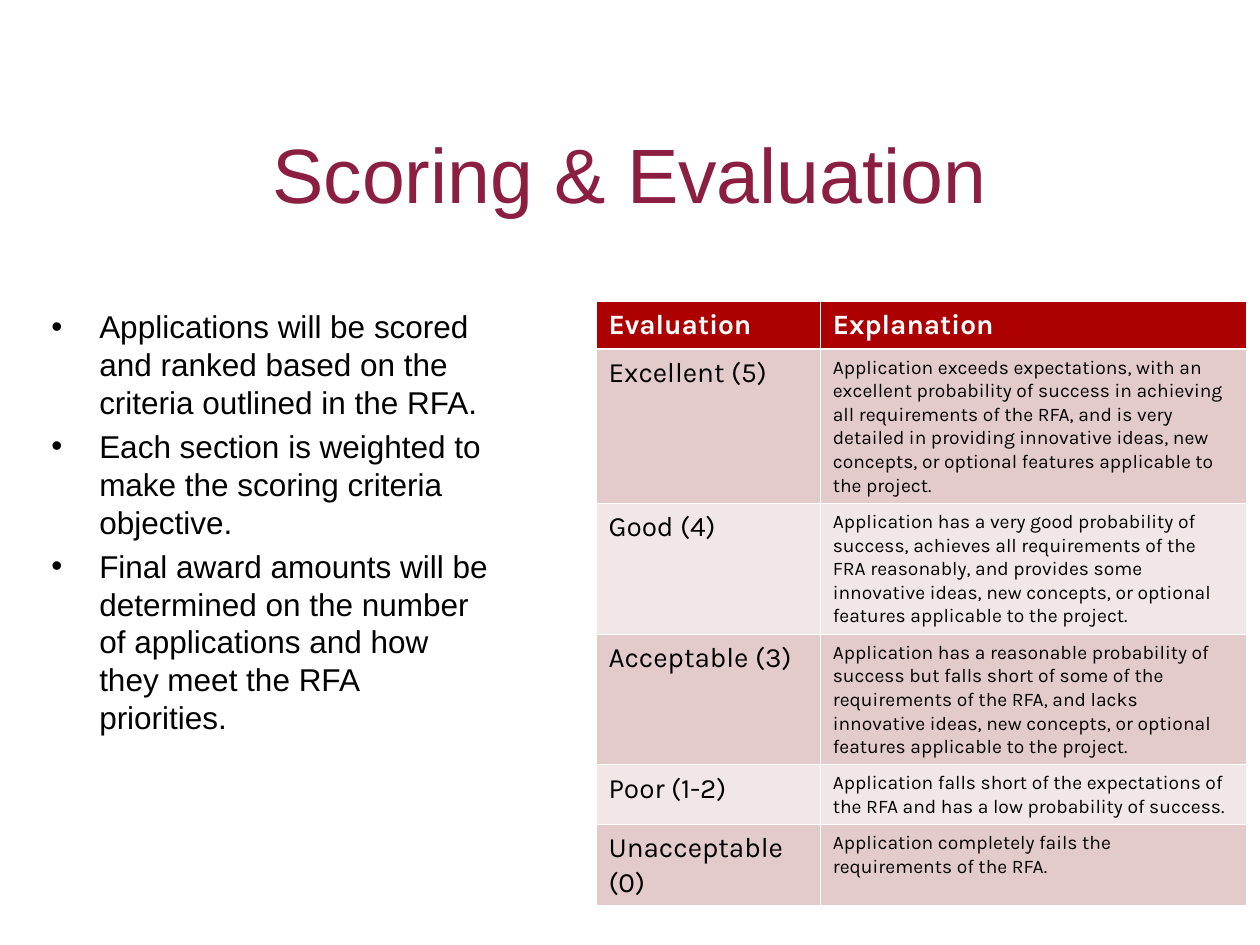
from lxml import etree
from pptx import Presentation, util as u
from pptx.dml.color import RGBColor
from pptx.enum import text
from pptx.oxml.ns import qn


def style(font, name, size, color, bold=False):
    font.name, font.size, font.bold = name, u.Pt(size), bold
    font.color.rgb = RGBColor.from_string(color)


def add_border(cell, side, points, color="FFFFFF"):
    line = etree.Element(qn("a:" + side), w=str(u.Pt(points)))
    fill = etree.SubElement(line, qn("a:solidFill"))
    etree.SubElement(fill, qn("a:srgbClr"), val=color)
    cell._tc.get_or_add_tcPr().append(line)


presentation = Presentation()
presentation.slide_width, presentation.slide_height = u.Inches(10), u.Inches(7.5)
slide = presentation.slides.add_slide(presentation.slide_layouts[5])
content_top = u.Inches(2.39)

# Title
title = slide.shapes.title
title.left, title.top = u.Inches(0.5), u.Inches(0.8)
title.width, title.height = u.Inches(9), u.Inches(1.14)
title.text_frame.text = "Scoring & Evaluation"
title.text_frame.vertical_anchor = text.MSO_ANCHOR.MIDDLE
paragraph = title.text_frame.paragraphs[0]
paragraph.alignment = text.PP_ALIGN.CENTER
style(paragraph.font, "Arial", 44, "8B1E41")

# Evaluation table
rows = [
    ("Evaluation", "Explanation", 0.38),
    ("Excellent (5)",
     "Application exceeds expectations, with an excellent probability of success in "
     "achieving all requirements of the RFA, and is very detailed in providing "
     "innovative ideas, new concepts, or optional features applicable to the project.",
     1.03),
    ("Good (4)",
     "Application has a very good probability of success, achieves all requirements of "
     "the FRA reasonably, and provides some innovative ideas, new concepts, or optional "
     "features applicable to the project.", 1.03),
    ("Acceptable (3)",
     "Application has a reasonable probability of success but falls short of some of the "
     "requirements of the RFA, and lacks innovative ideas, new concepts, or optional "
     "features applicable to the project.", 1.03),
    ("Poor (1-2)",
     "Application falls short of the expectations of the RFA and has a low probability "
     "of success.", 0.46),
    ("Unacceptable (0)",
     "Application completely fails the requirements of the RFA.", 0.55),
]
column_widths = [1.78, 3.38]
table = slide.shapes.add_table(
    len(rows), 2, u.Inches(4.73), content_top, u.Inches(sum(column_widths)),
    u.Inches(sum(row[-1] for row in rows))).table
for column, width in zip(table.columns, column_widths):
    column.width = u.Inches(width)

for row_index, (*labels, height) in enumerate(rows):
    table.rows[row_index].height = u.Inches(height)
    header = row_index == 0
    row_fill = "AD0101" if header else ("F1E7E7", "E3CBCB")[row_index % 2]
    for column_index, label in enumerate(labels):
        cell = table.cell(row_index, column_index)
        cell.text = label
        large = header or column_index == 0
        paragraph = cell.text_frame.paragraphs[0]
        paragraph.line_spacing = u.Pt(19.5 if large else 13.5)
        style(paragraph.font, "Karla", 16 if large else 11,
              "FFFFFF" if header else "000000", header)
        add_border(cell, "lnL", 0.6)
        add_border(cell, "lnR", 0.6)
        add_border(cell, "lnT", 1.82 if row_index == 1 else 0.6)
        add_border(cell, "lnB", 1.82 if header else 0.6)
        cell.fill.solid()
        cell.fill.fore_color.rgb = RGBColor.from_string(row_fill)

# Bulleted notes on scoring
bullets = [
    "Applications will be scored and ranked based on the criteria outlined in the RFA.",
    "Each section is weighted to make the scoring criteria objective.",
    "Final award amounts will be determined on the number of applications and how they "
    "meet the RFA priorities.",
]
notes = slide.shapes.add_textbox(
    u.Inches(0.31), content_top, u.Inches(3.7), u.Inches(4.47)).text_frame
notes.word_wrap = True
for index, bullet in enumerate(bullets):
    paragraph = notes.add_paragraph() if index else notes.paragraphs[0]
    paragraph.text = bullet
    if index:
        paragraph.space_before = u.Pt(3.6)
    properties = paragraph._p.get_or_add_pPr()
    properties.set("marL", str(u.Inches(0.38)))
    properties.set("indent", str(u.Inches(-0.38)))
    etree.SubElement(properties, qn("a:buFont"), typeface="Arial")
    etree.SubElement(properties, qn("a:buChar"), char="•")
    style(paragraph.font, "Arial", 18, "000000")

presentation.save("out.pptx")
